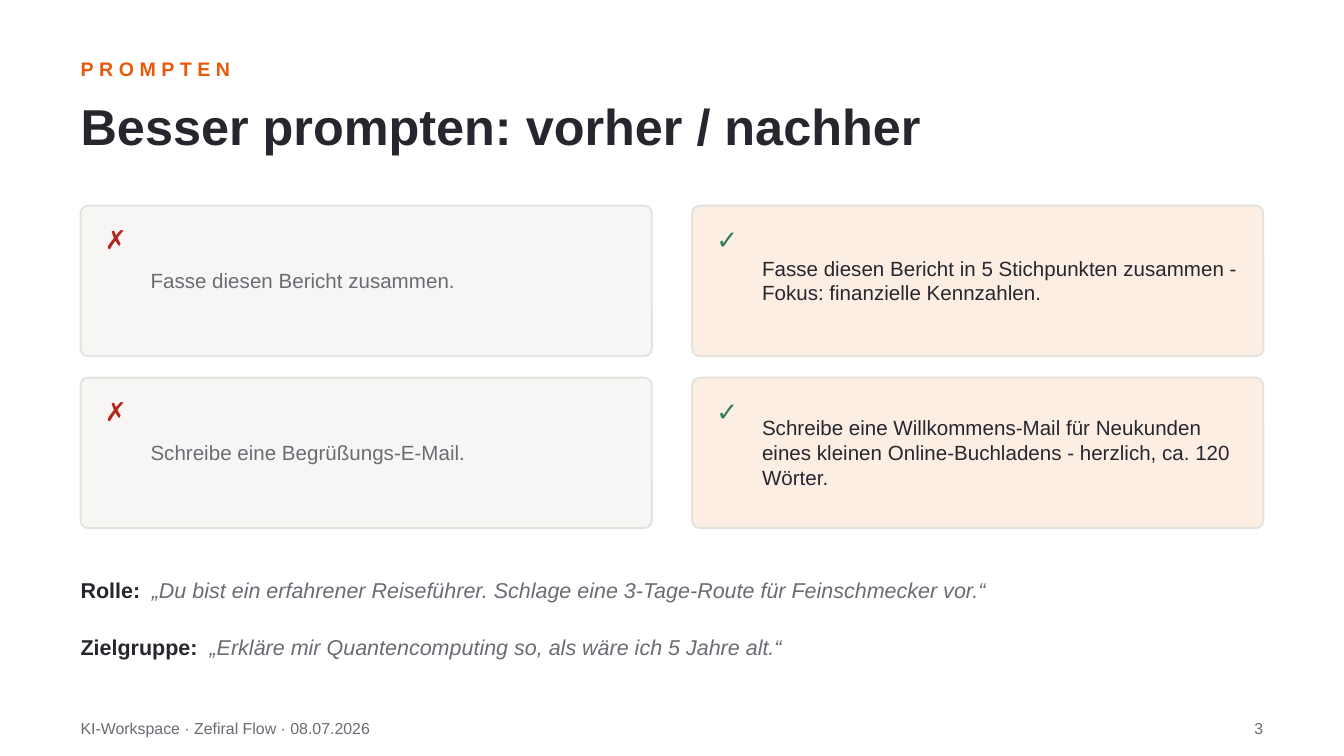
from lxml import etree
from pptx import Presentation
from pptx.dml.color import RGBColor
from pptx.enum.shapes import MSO_SHAPE
from pptx.enum.text import MSO_ANCHOR, MSO_AUTO_SIZE, PP_ALIGN
from pptx.oxml.ns import qn
from pptx.util import Inches, Pt

FONT = "Arial"
COLORS = {
    "accent": "E8590C", "ink": "26262E", "muted": "6B6B75", "border": "E4E2DF",
    "before": "F7F6F4", "after": "FDEEE3", "cross": "B3261E", "check": "2F7D5B",
}

KICKER = "PROMPTEN"
TITLE = "Besser prompten: vorher / nachher"
# (before, after)
PAIRS = [
    ("Fasse diesen Bericht zusammen.",
     "Fasse diesen Bericht in 5 Stichpunkten zusammen - Fokus: finanzielle Kennzahlen."),
    ("Schreibe eine Begrüßungs-E-Mail.",
     "Schreibe eine Willkommens-Mail für Neukunden eines kleinen Online-Buchladens"
     " - herzlich, ca. 120 Wörter."),
]
# (mark, mark colour, card fill, text colour) for each column
COLUMNS = [("✗", "cross", "before", "muted"), ("✓", "check", "after", "ink")]
# (label, quote, tab stop of the quote)
TIPS = [
    ("Rolle:", "„Du bist ein erfahrener Reiseführer. Schlage eine 3-Tage-Route"
               " für Feinschmecker vor.“", 0.53),
    ("Zielgruppe:", "„Erkläre mir Quantencomputing so, als wäre ich 5 Jahre alt.“", 0.96),
]
FOOTER = "KI-Workspace · Zefiral Flow · 08.07.2026"
PAGE = "3"

LEFT, WIDTH = 0.6, 8.8
CARD_W, CARD_H, CARD_TOP = 4.25, 1.12, 1.53
COL_STEP, ROW_STEP = CARD_W + 0.3, CARD_H + 0.16
TIP_TOP, TIP_STEP, TIP_H = 4.2, 0.42, 0.38


def rgb(name):
    return RGBColor.from_string(COLORS[name])


def style(r, size, color, bold=False, italic=False):
    f = r.font
    f.name, f.size, f.bold, f.italic = FONT, Pt(size), bold, italic
    f.color.rgb = rgb(color)


def set_frame(sp, text, align=PP_ALIGN.LEFT):
    """Fill a shape with text, without margins and centred vertically."""
    tf = sp.text_frame
    tf.text = text
    tf.word_wrap = True
    tf.auto_size = MSO_AUTO_SIZE.NONE
    tf.vertical_anchor = MSO_ANCHOR.MIDDLE
    tf.margin_left = tf.margin_right = tf.margin_top = tf.margin_bottom = 0
    p = tf.paragraphs[0]
    p.alignment = align
    return p


def add_text(s, box, text, size, color, bold=False, align=PP_ALIGN.LEFT):
    sp = s.shapes.add_textbox(*map(Inches, box))
    p = set_frame(sp, text, align)
    style(p.runs[0], size, color, bold)
    return p


def add_card(s, x, y, text, column):
    mark, mark_color, fill, text_color = column
    sp = s.shapes.add_shape(MSO_SHAPE.ROUNDED_RECTANGLE,
                            *map(Inches, (x, y, CARD_W, CARD_H)))
    sp.adjustments[0] = 0.05
    sp.shadow.inherit = False
    sp.fill.solid()
    sp.fill.fore_color.rgb = rgb(fill)
    sp.line.color.rgb = rgb("border")
    sp.line.width = Pt(1)
    add_text(s, (x + 0.18, y + 0.1, 0.3, 0.3), mark, 14, mark_color, True)
    add_text(s, (x + 0.52, y + 0.08, 3.55, 0.95), text, 11, text_color)


def add_tip(s, y, label, quote, tab):
    p = add_text(s, (LEFT, y, WIDTH, TIP_H), label, 11.5, "ink", True)
    tabs = etree.SubElement(p._p.get_or_add_pPr(), qn("a:tabLst"))
    etree.SubElement(tabs, qn("a:tab"), pos=str(Inches(tab)), algn="l")
    r = p.add_run()
    r.text = "\t" + quote
    style(r, 11.5, "muted", italic=True)


def main():
    prs = Presentation()
    prs.slide_width = Inches(10)
    prs.slide_height = prs.slide_width * 9 // 16
    s = prs.slides.add_slide(prs.slide_layouts[5])

    title = s.shapes.title
    title.left, title.top, title.width, title.height = map(
        Inches, (LEFT, 0.62, WIDTH, 0.62))
    style(set_frame(title, TITLE).runs[0], 27, "ink", True)

    kicker = add_text(s, (LEFT, 0.38, WIDTH, 0.26), KICKER, 10.5, "accent", True)
    kicker.runs[0].font._element.set("spc", "300")

    for row, pair in enumerate(PAIRS):
        for col, (text, column) in enumerate(zip(pair, COLUMNS)):
            add_card(s, LEFT + col * COL_STEP, CARD_TOP + row * ROW_STEP, text, column)

    for i, tip in enumerate(TIPS):
        add_tip(s, TIP_TOP + i * TIP_STEP, *tip)

    add_text(s, (LEFT, 5.3, 6, 0.24), FOOTER, 8.5, "muted")
    add_text(s, (8.8, 5.3, 0.6, 0.24), PAGE, 8.5, "muted", align=PP_ALIGN.RIGHT)
    prs.save("out.pptx")


if __name__ == "__main__":
    main()
